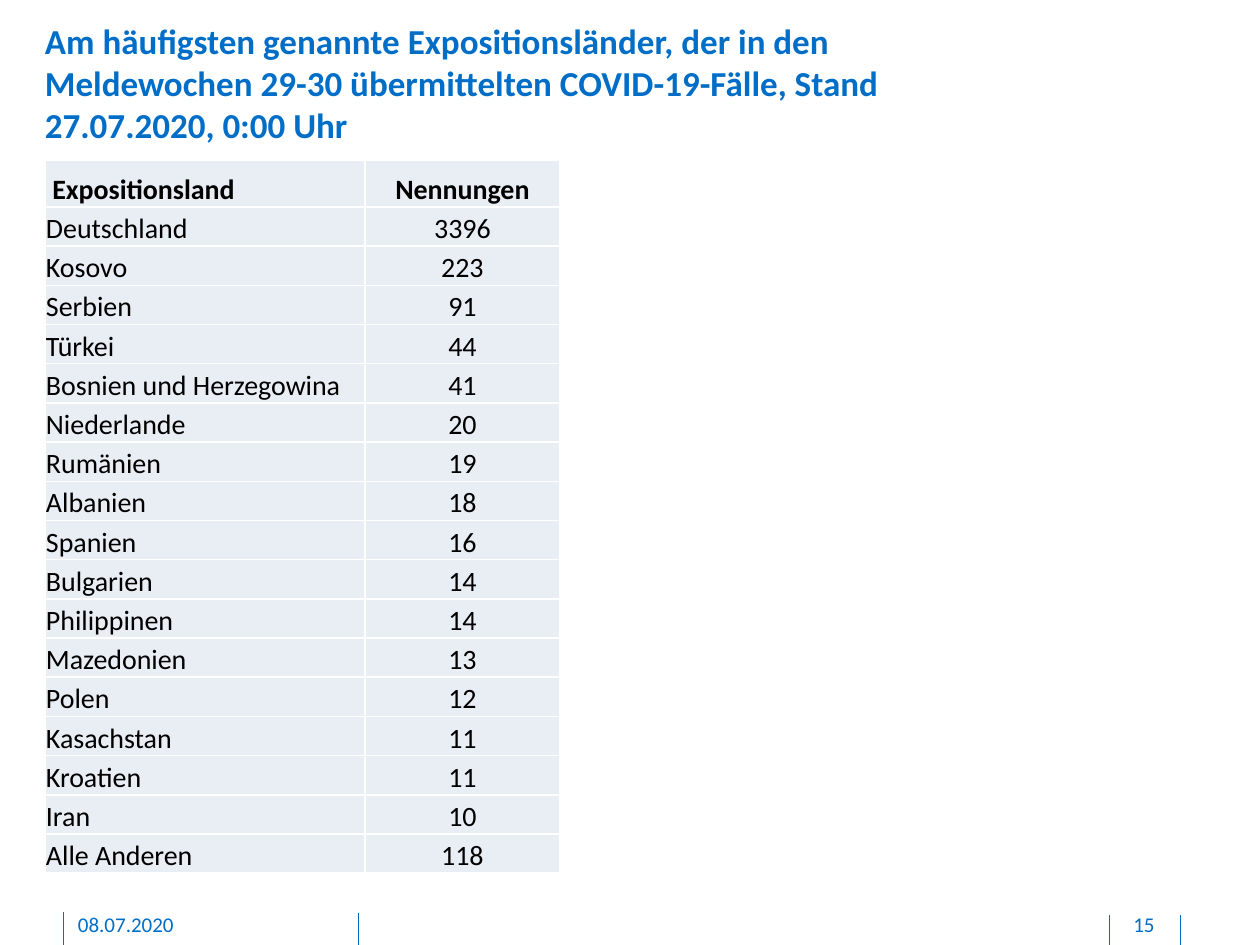
import pptx
import pptx.dml.color
import pptx.enum.shapes
import pptx.enum.text
import pptx.oxml
import pptx.oxml.ns
import pptx.util

BLUE = pptx.dml.color.RGBColor(0x00, 0x6E, 0xC7)
BLACK = pptx.dml.color.RGBColor(0x00, 0x00, 0x00)
PALE = pptx.dml.color.RGBColor(0xE9, 0xED, 0xF4)
WHITE = pptx.dml.color.RGBColor(0xFF, 0xFF, 0xFF)
LEFT = pptx.enum.text.PP_ALIGN.LEFT
CENTER = pptx.enum.text.PP_ALIGN.CENTER
FONT = "Calibri"
PX = 914400 // 126

HEADLINE = ("Am häufigsten genannte Expositionsländer, der in den Meldewochen 29-30 "
            "übermittelten COVID-19-Fälle, Stand 27.07.2020, 0:00 Uhr")
DATE = "08.07.2020"
PAGE = "15"
HEADER = (" Expositionsland", "Nennungen")
COUNTRIES = [
    ("Deutschland", 3396),
    ("Kosovo", 223),
    ("Serbien", 91),
    ("Türkei", 44),
    ("Bosnien und Herzegowina", 41),
    ("Niederlande", 20),
    ("Rumänien", 19),
    ("Albanien", 18),
    ("Spanien", 16),
    ("Bulgarien", 14),
    ("Philippinen", 14),
    ("Mazedonien", 13),
    ("Polen", 12),
    ("Kasachstan", 11),
    ("Kroatien", 11),
    ("Iran", 10),
    ("Alle Anderen", 118),
]
FOOTER_RULES = [(358, 913), (63, 912), (1181, 915), (1109, 915)]
SLIDE_W, SLIDE_H = 1260, 945
TABLE_LEFT, TABLE_TOP, TABLE_H = 45, 160, 714
COLUMNS = (320, 195)
HEADER_H = 47


def px(length):
    return pptx.util.Emu(length * PX)


def write(frame, text, size=16, color=BLACK, bold=False, align=LEFT):
    paragraph = frame.paragraphs[0]
    paragraph.alignment = align
    run = paragraph.add_run()
    run.text = text
    run.font.name = FONT
    run.font.size = pptx.util.Pt(size)
    run.font.bold = bold
    run.font.color.rgb = color


def add_text(slide, box, text, bottom=0, **style):
    frame = slide.shapes.add_textbox(*map(px, box)).text_frame
    frame.word_wrap = True
    frame.margin_left = frame.margin_top = frame.margin_right = 0
    frame.margin_bottom = px(bottom)
    write(frame, text, color=BLUE, **style)


def add_rule(slide, x, top):
    rule = slide.shapes.add_connector(
        pptx.enum.shapes.MSO_CONNECTOR.STRAIGHT, px(x), px(top), px(x), px(SLIDE_H))
    rule.line.color.rgb = BLUE
    rule.line.width = pptx.util.Pt(0.5)
    rule._element.spPr.append(pptx.oxml.parse_xml(
        f'<a:effectLst {pptx.oxml.ns.nsdecls("a")}/>'))


def add_borders(cell):
    properties = cell._tc.get_or_add_tcPr()
    for side in ("lnL", "lnR", "lnT", "lnB"):
        properties.append(pptx.oxml.parse_xml(
            f'<a:{side} {pptx.oxml.ns.nsdecls("a")} w="{pptx.util.Pt(1)}">'
            f'<a:solidFill><a:srgbClr val="{WHITE}"/></a:solidFill></a:{side}>'))


def add_country_table(slide):
    entries = [HEADER] + COUNTRIES
    table = slide.shapes.add_table(
        len(entries), len(COLUMNS), px(TABLE_LEFT), px(TABLE_TOP),
        px(sum(COLUMNS)), px(TABLE_H)).table
    table.first_row = table.horz_banding = False
    for column, width in zip(table.columns, COLUMNS):
        column.width = px(width)
    country_h = px(TABLE_H - HEADER_H) // len(COUNTRIES)
    for index, entry in enumerate(entries):
        table.rows[index].height = country_h if index else px(HEADER_H)
        for cell, value, align in zip(table.rows[index].cells, entry, (LEFT, CENTER)):
            add_borders(cell)
            cell.fill.solid()
            cell.fill.fore_color.rgb = PALE
            cell.margin_left = cell.margin_right = cell.margin_top = px(1)
            cell.margin_bottom = 0
            cell.vertical_anchor = pptx.enum.text.MSO_ANCHOR.BOTTOM
            write(cell.text_frame, str(value), bold=index == 0, align=align)


def main():
    deck = pptx.Presentation()
    deck.slide_width, deck.slide_height = px(SLIDE_W), px(SLIDE_H)
    slide = deck.slides.add_slide(deck.slide_layouts[6])
    for x, top in FOOTER_RULES:
        add_rule(slide, x, top)
    add_text(slide, (45, 20, 919, 127), HEADLINE, size=20, bold=True)
    add_text(slide, (78, 912, 256, 27), DATE, bottom=6, size=12)
    add_text(slide, (1110, 912, 68, 27), PAGE, bottom=6, size=12, align=CENTER)
    add_country_table(slide)
    deck.save("out.pptx")


if __name__ == "__main__":
    main()
